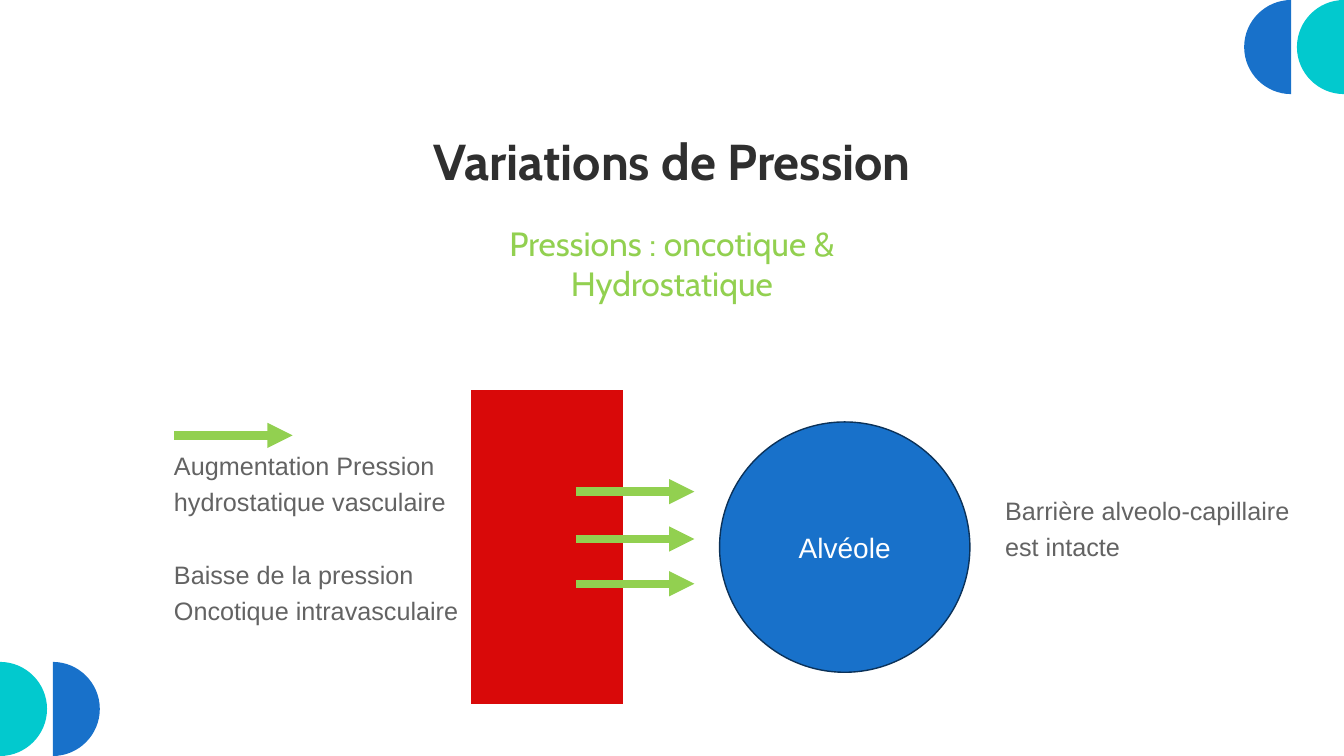
from dataclasses import dataclass

from lxml import etree
from pptx import Presentation
from pptx.dml.color import RGBColor
from pptx.enum import shapes, text
from pptx.oxml.ns import qn
from pptx.util import Pt


@dataclass(frozen=True)
class Theme:
    heading_font: str = "Cabin"
    body_font: str = "Arial"
    title_size: int = 36
    subtitle_size: int = 24
    label_size: int = 20
    note_size: int = 18
    dark: str = "2F2F2F"
    grey: str = "636363"
    white: str = "FFFFFF"
    green: str = "92D050"
    red: str = "D90909"
    blue: str = "1871CA"
    navy: str = "0B3259"
    teal: str = "02C9CE"


THEME = Theme()
WIDTH, HEIGHT = 960, 540
RADIUS = 33.6
DISC_STEP = 37.7
ARROW_LENGTH = 84.6
ARC = 0.55  # control point distance of a quarter circle, in radii

# Flat edge x, centre y, bulge direction, colour
HALF_DISCS = [
    (WIDTH - DISC_STEP, RADIUS, -1, THEME.blue),
    (WIDTH, RADIUS, -1, THEME.teal),
    (0, HEIGHT - RADIUS, 1, THEME.teal),
    (DISC_STEP, HEIGHT - RADIUS, 1, THEME.blue),
]
# Outline in radii: two ends of the flat edge, then two quarter curves
HALF_DISC_OUTLINE = [(0, -1), (0, 1),
                     (ARC, 1), (1, ARC), (1, 0),
                     (1, -ARC), (ARC, -1), (0, -1)]
TITLE = ("Variations de Pression", (66.3, 70, 827.5, 89))
SUBTITLE = ("Pressions : oncotique & Hydrostatique", (321.2, 141.8, 317.5, 75))
NOTES = [
    ("Augmentation Pression hydrostatique vasculaire", (124.3, 301.5, 211, 83.5)),
    ("Baisse de la pression Oncotique intravasculaire", (124.3, 385, 208, 72)),
    ("Barrière alveolo-capillaire est intacte", (718, 333.5, 211, 83.5)),
]
CAPILLARY = (335.8, 278, 110, 225.5)
ALVEOLUS = ("Alvéole", (514, 301.4, 178.8, 178.8))
ARROW_STARTS = [(124.5, 311), (411.4, 351.2), (411.4, 385), (411.4, 417)]


def rgb(colour):
    return RGBColor.from_string(colour)


def style_shape(shape, fill, line=None, line_width=0):
    shape.shadow.inherit = False
    shape.fill.solid()
    shape.fill.fore_color.rgb = rgb(fill)
    if line:
        shape.line.color.rgb = rgb(line)
        shape.line.width = Pt(line_width)
    else:
        shape.line.fill.background()


def write(shape, words, font, size, colour, bold=False, align=text.PP_ALIGN.CENTER,
          anchor=text.MSO_ANCHOR.MIDDLE, spacing=None):
    frame = shape.text_frame
    frame.word_wrap = True
    frame.vertical_anchor = anchor
    paragraph = frame.paragraphs[0]
    paragraph.alignment = align
    if spacing:
        paragraph.line_spacing = spacing
    run = paragraph.add_run()
    run.text = words
    run.font.name = font
    run.font.size = Pt(size)
    run.font.bold = bold
    run.font.color.rgb = rgb(colour)


def add_text(slide, words, box, *style, **options):
    """Add a text box without insets."""
    shape = slide.shapes.add_textbox(*map(Pt, box))
    frame = shape.text_frame
    frame.margin_left = frame.margin_right = frame.margin_top = frame.margin_bottom = 0
    write(shape, words, *style, **options)


def bend_segments(shape):
    """Turn each three segments after the first into one cubic curve."""
    segments = list(shape.element.iter(qn("a:lnTo")))[1:]
    for first in range(0, len(segments), 3):
        curve = etree.Element(qn("a:cubicBezTo"))
        segments[first].addprevious(curve)
        for segment in segments[first:first + 3]:
            curve.append(segment[0])
            segment.getparent().remove(segment)


def add_half_disc(slide, flat_x, centre_y, direction, colour):
    points = [(Pt(flat_x + direction * RADIUS * x), Pt(centre_y + RADIUS * y))
              for x, y in HALF_DISC_OUTLINE]
    builder = slide.shapes.build_freeform(*points[0])
    builder.add_line_segments(points[1:], close=True)
    half_disc = builder.convert_to_shape()
    bend_segments(half_disc)
    style_shape(half_disc, colour)


def add_arrow(slide, x, y):
    arrow = slide.shapes.add_connector(
        shapes.MSO_CONNECTOR.STRAIGHT, Pt(x), Pt(y), Pt(x + ARROW_LENGTH), Pt(y))
    arrow.line.color.rgb = rgb(THEME.green)
    arrow.line.width = Pt(6)
    properties = arrow.element.spPr
    etree.SubElement(properties.find(qn("a:ln")), qn("a:tailEnd"), type="triangle")
    etree.SubElement(properties, qn("a:effectLst"))


def main():
    presentation = Presentation()
    presentation.slide_width, presentation.slide_height = Pt(WIDTH), Pt(HEIGHT)
    slide = presentation.slides.add_slide(presentation.slide_layouts[6])

    for half_disc in HALF_DISCS:
        add_half_disc(slide, *half_disc)
    add_text(slide, *TITLE, THEME.heading_font, THEME.title_size, THEME.dark, bold=True)
    add_text(slide, *SUBTITLE, THEME.heading_font, THEME.subtitle_size, THEME.green,
             anchor=text.MSO_ANCHOR.BOTTOM)

    capillary = slide.shapes.add_shape(shapes.MSO_SHAPE.RECTANGLE, *map(Pt, CAPILLARY))
    style_shape(capillary, THEME.red, THEME.white, 1.5)
    label, box = ALVEOLUS
    alveolus = slide.shapes.add_shape(shapes.MSO_SHAPE.OVAL, *map(Pt, box))
    style_shape(alveolus, THEME.blue, THEME.navy, 1)
    write(alveolus, label, THEME.body_font, THEME.label_size, THEME.white)

    for words, box in NOTES:
        add_text(slide, words, box, THEME.body_font, THEME.note_size, THEME.grey,
                 align=text.PP_ALIGN.LEFT, spacing=1.2)
    for start in ARROW_STARTS:
        add_arrow(slide, *start)

    presentation.save("out.pptx")


if __name__ == "__main__":
    main()
